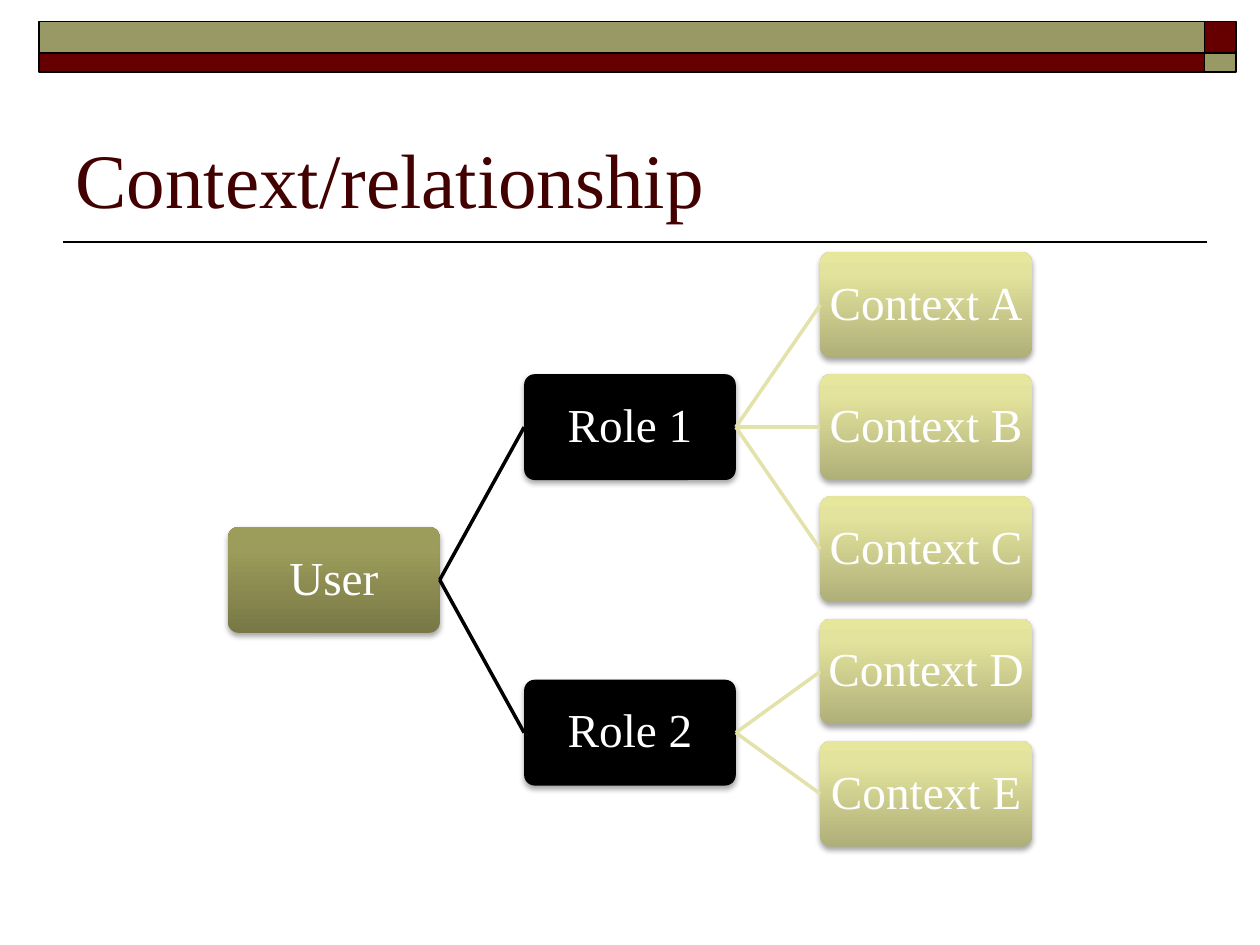
import copy

import pptx
import pptx.dml.color
import pptx.enum.dml
import pptx.enum.shapes
import pptx.enum.text
import pptx.oxml
import pptx.oxml.ns
import pptx.util

SHAPES = pptx.enum.shapes.MSO_SHAPE
ALIGN = pptx.enum.text.PP_ALIGN
ANCHOR = pptx.enum.text.MSO_ANCHOR
RIGHT_SIDE, LEFT_SIDE = 3, 1

MAROON, OLIVE, BLACK, WHITE = "660000", "999966", "000000", "FFFFFF"
TITLE_COLOR, PALE_LINE = "420000", "E2E2AA"
USER_FILL = ((0, "787846"), (0.8, "9C9C5B"), (1, "9E9E5B"))
CONTEXT_FILL = ((0, "AFAF79"), (0.8, "E3E39D"), (1, "E6E69C"))
ROLES = {
    "Role 1": ("Context A", "Context B", "Context C"),
    "Role 2": ("Context D", "Context E"),
}


def color(text):
    return pptx.dml.color.RGBColor.from_string(text)


class SlidePainter:
    font = "Times New Roman"
    tree_left, tree_top = 1.81, 2.0
    column_step, row_step = 2.35, 0.97
    box_width, box_height = 1.68, 0.84

    def __init__(self, deck):
        self.page = deck.slides.add_slide(deck.slide_layouts[5])

    def add_span(self, para, text, size, hex_color):
        span = para.add_run()
        span.text = text
        span.font.name = self.font
        span.font.size = pptx.util.Pt(size)
        span.font.color.rgb = color(hex_color)

    def title(self, text, *place):
        box = self.page.shapes.title
        box.left, box.top, box.width, box.height = map(pptx.util.Inches, place)
        frame = box.text_frame
        frame.auto_size = pptx.enum.text.MSO_AUTO_SIZE.NONE
        frame.vertical_anchor = ANCHOR.BOTTOM
        frame.paragraphs[0].alignment = ALIGN.LEFT
        self.add_span(frame.paragraphs[0], text, 44, TITLE_COLOR)

    def shape(self, kind, *place):
        box = self.page.shapes.add_shape(kind, *map(pptx.util.Inches, place))
        box.shadow.inherit = False
        return box

    def bar(self, fill, *place):
        box = self.shape(SHAPES.RECTANGLE, *place)
        box.fill.solid()
        box.fill.fore_color.rgb = color(fill)
        box.line.color.rgb = color(BLACK)
        box.line.width = pptx.util.Pt(1)

    def line(self, hex_color, width, start=(0, 0), end=(0, 0)):
        link = self.page.shapes.add_connector(
            pptx.enum.shapes.MSO_CONNECTOR.STRAIGHT,
            *map(pptx.util.Inches, (*start, *end)))
        link.line.color.rgb = color(hex_color)
        link.line.width = pptx.util.Pt(width)
        link._element.spPr.append(pptx.oxml.parse_xml(
            f"<a:effectLst {pptx.oxml.ns.nsdecls('a')}/>"))
        return link

    def join(self, parent, child, hex_color):
        link = self.line(hex_color, 2)
        link.begin_connect(parent, RIGHT_SIDE)
        link.end_connect(child, LEFT_SIDE)

    def gradient(self, box, stops):
        """Fill upwards from the first stop to the last."""
        box.fill.gradient()
        box.fill.gradient_angle = 90
        stop_list = box._element.spPr.find(
            pptx.oxml.ns.qn("a:gradFill")).find(pptx.oxml.ns.qn("a:gsLst"))
        stop_list.append(copy.deepcopy(stop_list[-1]))
        for stop, (position, hex_color) in zip(box.fill.gradient_stops, stops):
            stop.position = position
            stop.color.rgb = color(hex_color)

    def drop_shadow(self, box):
        effects = box._element.spPr.find(pptx.oxml.ns.qn("a:effectLst"))
        effects.append(pptx.oxml.parse_xml(
            f'<a:outerShdw {pptx.oxml.ns.nsdecls("a")} blurRad="40000" '
            'dist="23000" dir="5400000" rotWithShape="0">'
            '<a:srgbClr val="000000"><a:alpha val="35000"/></a:srgbClr>'
            '</a:outerShdw>'))

    def node(self, text, column, row, fill):
        """Place a rounded box on the tree grid; rows may be fractional."""
        box = self.shape(SHAPES.ROUNDED_RECTANGLE,
                         self.tree_left + column * self.column_step,
                         self.tree_top + row * self.row_step,
                         self.box_width, self.box_height)
        box.adjustments[0] = 0.1
        box.line.fill.background()
        if isinstance(fill, str):
            box.fill.solid()
            box.fill.fore_color.rgb = color(fill)
        else:
            self.gradient(box, fill)
        self.drop_shadow(box)
        frame = box.text_frame
        frame.word_wrap = True
        frame.vertical_anchor = ANCHOR.MIDDLE
        frame.margin_left = frame.margin_right = pptx.util.Inches(0.02)
        frame.margin_top = frame.margin_bottom = pptx.util.Inches(0.02)
        para = frame.paragraphs[0]
        para.alignment = ALIGN.CENTER
        para.line_spacing = 0.9
        self.add_span(para, text, 27, WHITE)
        return box


def main():
    deck = pptx.Presentation()
    deck.slide_width = pptx.util.Inches(10)
    deck.slide_height = pptx.util.Inches(7.5)
    painter = SlidePainter(deck)

    painter.line(BLACK, 1, (0.5, 1.92), (9.58, 1.92))
    columns = ((0.31, 9.25), (9.56, 0.25))
    bands = ((0.17, 0.25, (OLIVE, MAROON)), (0.42, 0.15, (MAROON, OLIVE)))
    for top, height, fills in bands:
        for (left, width), fill in zip(columns, fills):
            painter.bar(fill, left, top, width, height)
    painter.title("Context/relationship", 0.5, 0.58, 9, 1.25)

    # Each parent sits midway between its first and last child.
    role_rows = []
    first_row = 0
    for contexts in ROLES.values():
        role_rows.append(first_row + (len(contexts) - 1) / 2)
        first_row += len(contexts)
    user = painter.node("User", 0, sum(role_rows) / len(role_rows), USER_FILL)

    row = 0
    for (name, contexts), role_row in zip(ROLES.items(), role_rows):
        role = painter.node(name, 1, role_row, BLACK)
        painter.join(user, role, BLACK)
        for context in contexts:
            child = painter.node(context, 2, row, CONTEXT_FILL)
            painter.join(role, child, PALE_LINE)
            row += 1

    deck.save("out.pptx")


if __name__ == "__main__":
    main()
